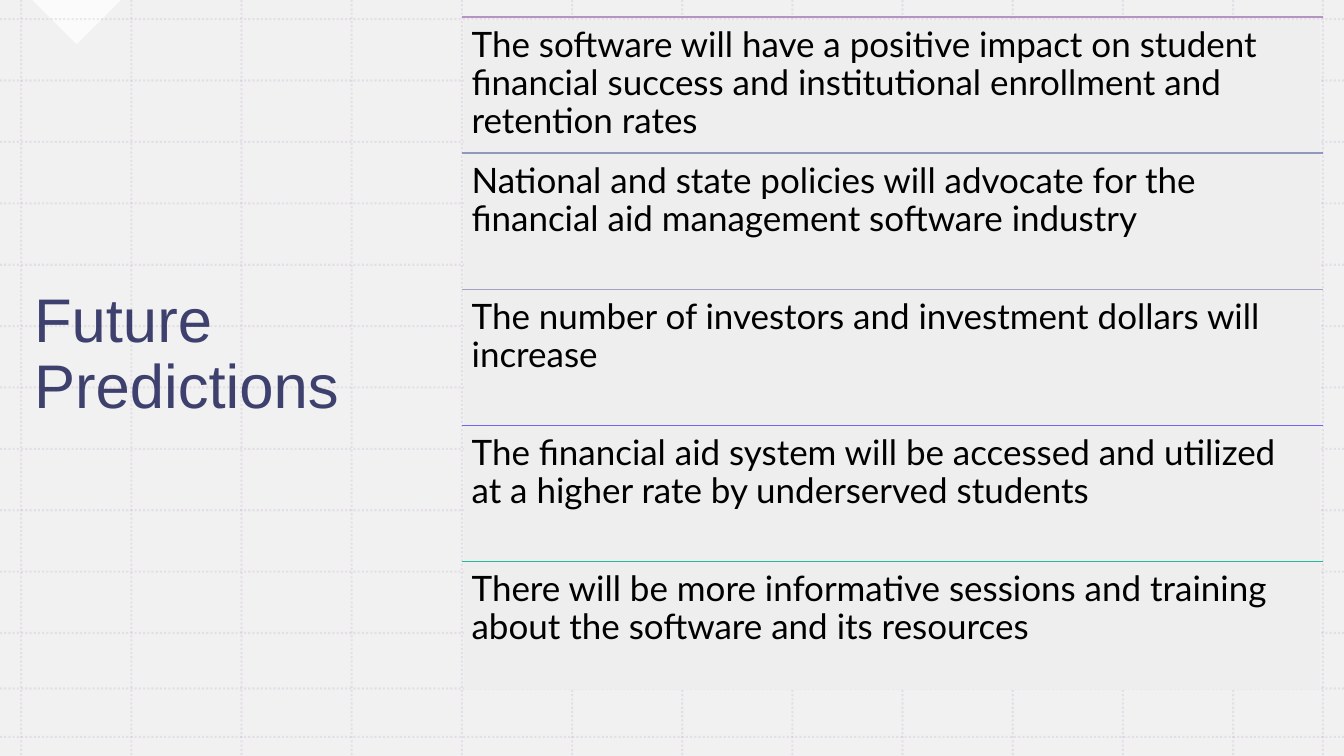
import pptx
import pptx.dml.color
import pptx.enum.dml
import pptx.enum.shapes
import pptx.enum.text
import pptx.oxml
import pptx.oxml.ns
import pptx.util
from lxml import etree

Inches = pptx.util.Inches
RGBColor = pptx.dml.color.RGBColor
Shape = pptx.enum.shapes.MSO_SHAPE
Anchor = pptx.enum.text.MSO_ANCHOR
Dash = pptx.enum.dml.MSO_LINE

WHITE = RGBColor(0xFF, 0xFF, 0xFF)
BLACK = RGBColor(0x00, 0x00, 0x00)
PALE_GREY = RGBColor(0xEE, 0xEE, 0xEE)
NAVY = RGBColor(0x12, 0x15, 0x4E)
MAUVE = RGBColor(0xB4, 0x95, 0xC2)
STEEL = RGBColor(0x8F, 0x99, 0xBB)
LAVENDER = RGBColor(0xA3, 0xA3, 0xC1)
VIOLET = RGBColor(0x71, 0x62, 0xFE)
GREEN = RGBColor(0x1E, 0xBE, 0x9B)

WIDTH, HEIGHT = 13.33, 7.5
LIST_LEFT, LIST_TOP, LIST_WIDTH, ROW_HEIGHT = 4.58, 0.17, 8.54, 1.35

PREDICTIONS = [
    (MAUVE, "The software will have a positive impact on student financial success "
            "and institutional enrollment and retention rates"),
    (STEEL, "National and state policies will advocate for the financial aid "
            "management software industry"),
    (LAVENDER, "The number of investors and investment dollars will increase"),
    (VIOLET, "The financial aid system will be accessed and utilized at a higher "
             "rate by underserved students"),
    (GREEN, "There will be more informative sessions and training about the "
            "software and its resources"),
]


def set_opacity(fill_parent, percent):
    """Add an alpha value to the solid colour found under the given element."""
    color = next(fill_parent.iter(pptx.oxml.ns.qn("a:srgbClr")))
    alpha = etree.SubElement(color, pptx.oxml.ns.qn("a:alpha"))
    alpha.set("val", str(percent * 1000))


class SlideBuilder:
    def __init__(self, slide):
        self.shapes = slide.shapes

    def group(self):
        return self.shapes.add_group_shape().shapes

    def panel(self, left, top, width, height, color, opacity=100,
              kind=Shape.RECTANGLE, rotation=0):
        shape = self.shapes.add_shape(
            kind, Inches(left), Inches(top), Inches(width), Inches(height))
        shape.shadow.inherit = False
        shape.rotation = rotation
        shape.fill.solid()
        shape.fill.fore_color.rgb = color
        shape.line.fill.background()
        if opacity < 100:
            set_opacity(shape.fill._xPr, opacity)

    def line(self, shapes, start, end, color, points, dash=None, opacity=100):
        connector = shapes.add_connector(
            pptx.enum.shapes.MSO_CONNECTOR.STRAIGHT,
            *[Inches(value) for value in (*start, *end)])
        line = connector.line
        line.color.rgb = color
        line.width = pptx.util.Pt(points)
        if dash:
            line.dash_style = dash
        properties = connector._element.spPr
        if opacity < 100:
            set_opacity(properties, opacity)
        etree.SubElement(properties, pptx.oxml.ns.qn("a:effectLst"))

    def text(self, shapes, left, top, width, height, words, color, font,
             opacity=100, **frame_format):
        box = shapes.add_textbox(
            Inches(left), Inches(top), Inches(width), Inches(height))
        frame = box.text_frame
        for name, value in {"word_wrap": True, **frame_format}.items():
            setattr(frame, name, value)
        paragraph = frame.paragraphs[0]
        paragraph.line_spacing = 0.9
        run = paragraph.add_run()
        run.text = words
        for name, value in font.items():
            setattr(run.font, name, value)
        run.font.color.rgb = color
        if opacity < 100:
            set_opacity(run._r, opacity)

    def grid(self):
        shapes = self.group()
        style = {"color": MAUVE, "points": 1.5, "dash": Dash.ROUND_DOT, "opacity": 20}
        column_step = (12.23 - 0.21) / 11
        row_step = (6.28 - 0.19) / 10
        for x in [0.21 + column_step * i for i in range(12)] + [13.12]:
            self.line(shapes, (x, 0), (x, HEIGHT), **style)
        for y in [0.19 + row_step * i for i in range(11)] + [6.83, 7.31]:
            self.line(shapes, (0, y), (WIDTH, y), **style)

    def prediction_list(self):
        shapes = self.group()
        margins = {f"margin_{side}": Inches(0.1)
                   for side in ("left", "top", "right", "bottom")}
        font = {"name": "Lato", "size": pptx.util.Pt(25)}
        for row, (color, words) in enumerate(PREDICTIONS):
            top = LIST_TOP + row * ROW_HEIGHT
            self.line(shapes, (LIST_LEFT, top), (LIST_LEFT + LIST_WIDTH, top), color, 1)
            self.text(shapes, LIST_LEFT, top, LIST_WIDTH, ROW_HEIGHT, words,
                      BLACK, font, **margins)


def main():
    presentation = pptx.Presentation()
    presentation.slide_width = Inches(WIDTH)
    presentation.slide_height = Inches(HEIGHT)
    builder = SlideBuilder(presentation.slides.add_slide(presentation.slide_layouts[6]))

    builder.panel(0, 0, WIDTH, HEIGHT, WHITE)
    builder.panel(0, 0, WIDTH, HEIGHT, PALE_GREY, opacity=80)
    builder.panel(0.45, -0.31, 0.62, 0.62, WHITE, opacity=75,
                  kind=Shape.RIGHT_TRIANGLE, rotation=315)
    builder.grid()
    builder.text(builder.shapes, 0.24, 0.5, 4.07, 6.05, "Future Predictions", NAVY,
                 {"name": "Arial", "size": pptx.util.Pt(44)}, opacity=80,
                 vertical_anchor=Anchor.MIDDLE)
    builder.panel(4.6, 0.21, 8.49, 6.63, PALE_GREY)
    builder.prediction_list()

    presentation.save("out.pptx")


if __name__ == "__main__":
    main()
